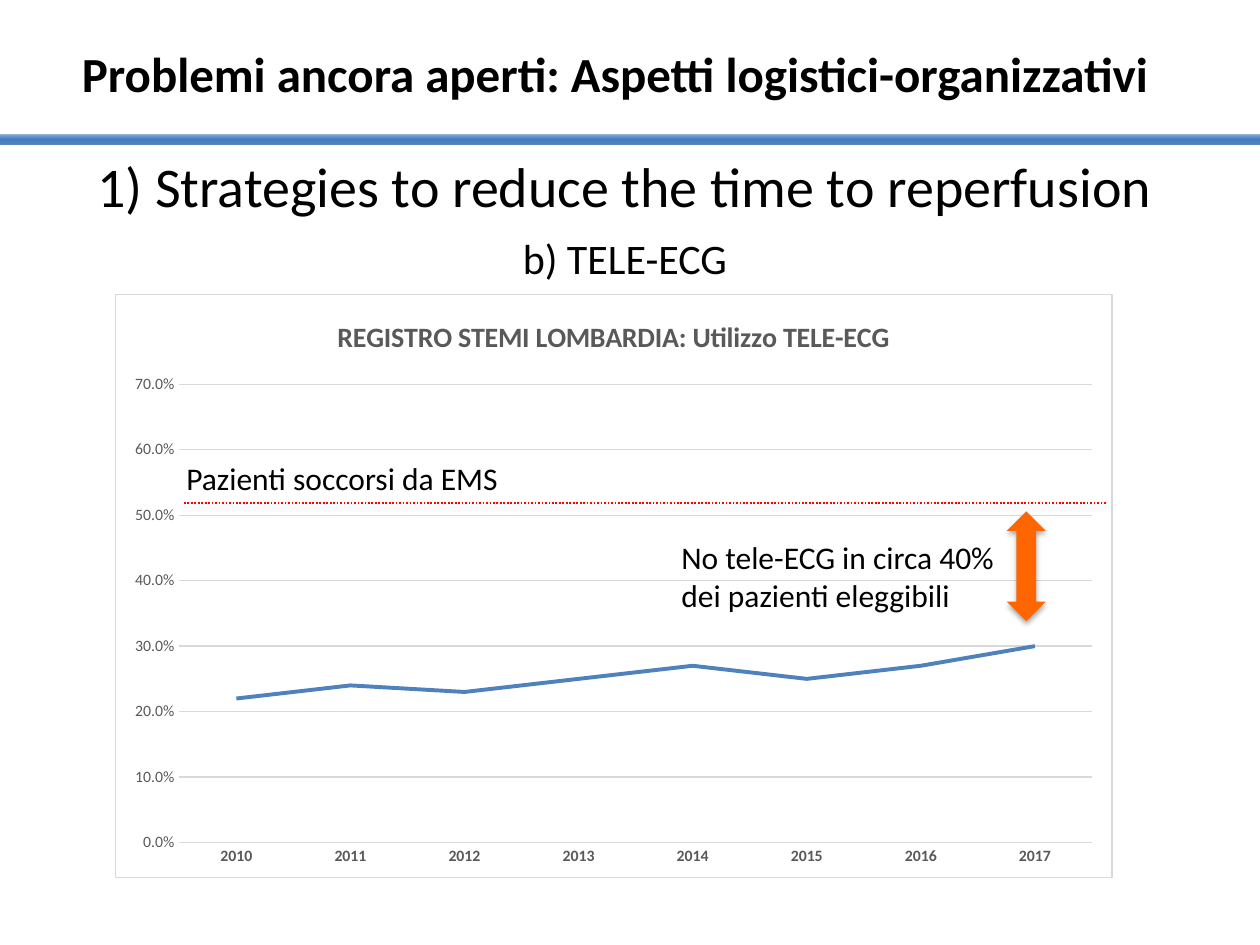
from lxml import etree
from pptx import Presentation
from pptx.chart.data import CategoryChartData
from pptx.dml.color import RGBColor
from pptx.enum.chart import XL_CHART_TYPE, XL_TICK_MARK
from pptx.enum.dml import MSO_LINE
from pptx.enum.shapes import MSO_CONNECTOR, MSO_SHAPE
from pptx.enum.text import MSO_ANCHOR, PP_ALIGN
from pptx.oxml import parse_xml
from pptx.oxml.ns import nsdecls, qn
from pptx.util import Inches, Pt

LINE_CHART = XL_CHART_TYPE.LINE
NO_TICK = XL_TICK_MARK.NONE
DOTTED = MSO_LINE.ROUND_DOT
STRAIGHT = MSO_CONNECTOR.STRAIGHT
RECTANGLE = MSO_SHAPE.RECTANGLE
DOUBLE_ARROW = MSO_SHAPE.UP_DOWN_ARROW
MIDDLE = MSO_ANCHOR.MIDDLE
LEFT, CENTER = PP_ALIGN.LEFT, PP_ALIGN.CENTER

FONT = "Calibri"
BLACK = RGBColor(0x00, 0x00, 0x00)
WHITE = RGBColor(0xFF, 0xFF, 0xFF)
GRAY = RGBColor(0x59, 0x59, 0x59)
LIGHT_GRAY = RGBColor(0xD9, 0xD9, 0xD9)
BLUE = RGBColor(0x4F, 0x81, 0xBD)
BRIGHT_BLUE = RGBColor(0x3D, 0x7C, 0xC7)
ORANGE = RGBColor(0xFF, 0x66, 0x00)
RED = RGBColor(0xFF, 0x00, 0x00)

YEARS = [str(year) for year in range(2010, 2018)]
TELE_ECG_SHARES = [0.22, 0.24, 0.23, 0.25, 0.27, 0.25, 0.27, 0.3]


def inches(box):
    return [Inches(length) for length in box]


def style_font(font, size, color=BLACK, bold=False):
    font.name = FONT
    font.size = Pt(size)
    font.bold = bold
    font.color.rgb = color


def write_paragraph(paragraph, text, size=18, color=BLACK, bold=False,
                    align=LEFT, space_before=0):
    paragraph.alignment = align
    paragraph.space_before = Pt(space_before)
    run = paragraph.add_run()
    run.text = text
    style_font(run.font, size, color, bold)


def add_text(slide, box, lines, wrap=False):
    frame = slide.shapes.add_textbox(*inches(box)).text_frame
    frame.word_wrap = wrap
    for index, (text, text_format) in enumerate(lines):
        paragraph = frame.add_paragraph() if index else frame.paragraphs[0]
        write_paragraph(paragraph, text, **text_format)


def add_shadow(shape, opacity, distance):
    properties = shape._element.spPr
    for effects in properties.findall(qn("a:effectLst")):
        properties.remove(effects)
    effects = etree.SubElement(properties, qn("a:effectLst"))
    shadow = etree.SubElement(
        effects, qn("a:outerShdw"), blurRad=str(Pt(3.1)), dist=str(Pt(distance)),
        dir="5400000", rotWithShape="0")
    color = etree.SubElement(shadow, qn("a:srgbClr"), val=str(BLACK))
    etree.SubElement(color, qn("a:alpha"), val=str(opacity * 1000))


def build_title(slide, box):
    title = slide.shapes.title
    title.left, title.top, title.width, title.height = inches(box)
    title.text_frame.word_wrap = False
    title.text_frame.vertical_anchor = MIDDLE
    write_paragraph(title.text_frame.paragraphs[0],
                    "Problemi ancora aperti: Aspetti logistici-organizzativi",
                    size=28, bold=True, align=CENTER)


def build_band(slide, box):
    band = slide.shapes.add_shape(RECTANGLE, *inches(box))
    band.shadow.inherit = False
    band.line.fill.background()
    band.fill.gradient()
    band.fill.gradient_angle = 90
    stops = band._element.spPr.find(qn("a:gradFill")).find(qn("a:gsLst"))
    for stop in list(stops):
        stops.remove(stop)
    for position, color, opacity in ((24, BLUE, 100), (53, BRIGHT_BLUE, 100),
                                     (100, BLUE, 66)):
        stop = etree.SubElement(stops, qn("a:gs"), pos=str(position * 1000))
        tint = etree.SubElement(stop, qn("a:srgbClr"), val=str(color))
        etree.SubElement(tint, qn("a:alpha"), val=str(opacity * 1000))


def build_heading(slide, box):
    add_text(slide, box, [
        ("1) Strategies to reduce the time to reperfusion",
         dict(size=32, align=CENTER)),
        ("b) TELE-ECG", dict(size=24, align=CENTER, space_before=8)),
    ], wrap=True)


def style_chart_area(chart):
    properties = parse_xml(
        f'<c:spPr {nsdecls("c", "a")}>'
        f'<a:solidFill><a:srgbClr val="{WHITE}"/></a:solidFill>'
        f'<a:ln w="{Pt(0.75)}"><a:solidFill><a:srgbClr val="{LIGHT_GRAY}"/>'
        '</a:solidFill></a:ln></c:spPr>')
    chart._chartSpace.find(qn("c:chart")).addnext(properties)


def build_chart(slide, box):
    data = CategoryChartData(number_format="0.0%")
    data.categories = YEARS
    data.add_series("Tele-ECG", TELE_ECG_SHARES)
    chart = slide.shapes.add_chart(LINE_CHART, *inches(box), data).chart
    style_font(chart.font, 10)
    style_chart_area(chart)
    chart.has_legend = False
    chart.has_title = True
    write_paragraph(chart.chart_title.text_frame.paragraphs[0],
                    "REGISTRO STEMI LOMBARDIA: Utilizzo TELE-ECG",
                    size=16, color=GRAY, bold=True, align=CENTER)
    chart.chart_title.include_in_layout = False

    years, shares = chart.category_axis, chart.value_axis
    for axis in (years, shares):
        axis.major_tick_mark = axis.minor_tick_mark = NO_TICK
        style_font(axis.tick_labels.font, 9, GRAY, bold=axis is years)
    shares.minimum_scale, shares.maximum_scale, shares.major_unit = 0, 0.7, 0.1
    shares.tick_labels.number_format = "0.0%"
    shares.tick_labels.number_format_is_linked = False
    shares.format.line.fill.background()
    for line in (years.format.line, shares.major_gridlines.format.line):
        line.color.rgb = LIGHT_GRAY
        line.width = Pt(0.75)

    plot = chart.plots[0]
    plot.vary_by_categories = False
    series = plot.series[0]
    series.smooth = False
    series.format.line.color.rgb = BLUE
    series.format.line.width = Pt(2.25)


def build_gap_note(slide, box):
    left, top, width, height = box
    arrow_width = 0.31
    arrow = slide.shapes.add_shape(
        DOUBLE_ARROW,
        *inches((left + width - arrow_width, top, arrow_width, height)))
    arrow.fill.solid()
    arrow.fill.fore_color.rgb = ORANGE
    arrow.line.fill.background()
    add_shadow(arrow, opacity=35, distance=1.8)
    add_text(slide, (left, top + 0.16, width - arrow_width, height - 0.16),
             [("No tele-ECG in circa 40%", {}), ("dei pazienti eleggibili", {})])


def build_ems_level(slide, box):
    left, top, width, height = box
    bottom = top + height
    level = slide.shapes.add_connector(
        STRAIGHT, *inches((left + 0.08, bottom, left + width, bottom)))
    level.line.color.rgb = RED
    level.line.width = Pt(1)
    level.line.dash_style = DOTTED
    add_shadow(level, opacity=38, distance=1.6)
    add_text(slide, (left, top, 2.71, height), [("Pazienti soccorsi da EMS", {})])


def main():
    presentation = Presentation()
    presentation.slide_width = Inches(10)
    presentation.slide_height = Inches(7.5)
    slide = presentation.slides.add_slide(presentation.slide_layouts[5])
    build_title(slide, (0.48, 0.29, 8.8, 0.57))
    build_heading(slide, (0.43, 1.15, 9.06, 1.18))
    build_band(slide, (0, 1.07, 10, 0.08))
    build_chart(slide, (0.91, 2.33, 7.92, 4.64))
    build_gap_note(slide, (5.31, 4.06, 2.99, 0.87))
    build_ems_level(slide, (1.38, 3.59, 7.4, 0.4))
    presentation.save("out.pptx")


if __name__ == "__main__":
    main()
